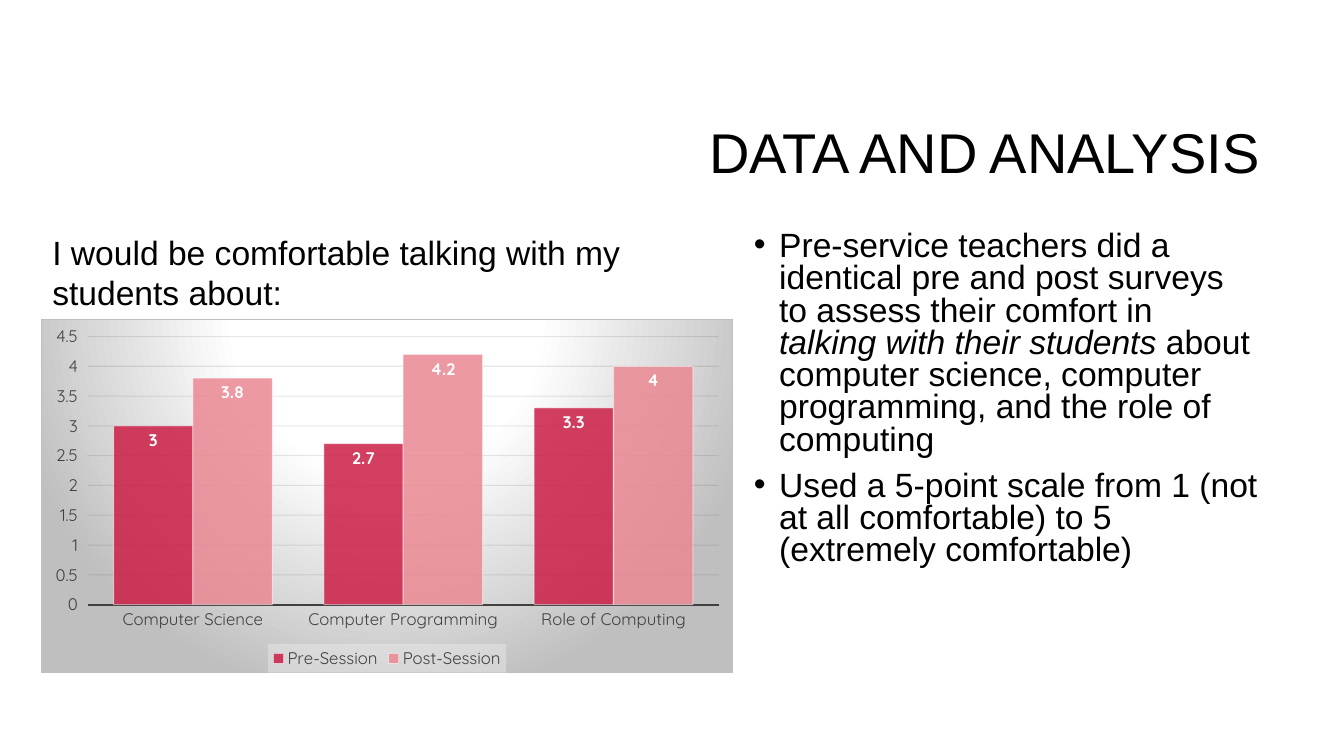
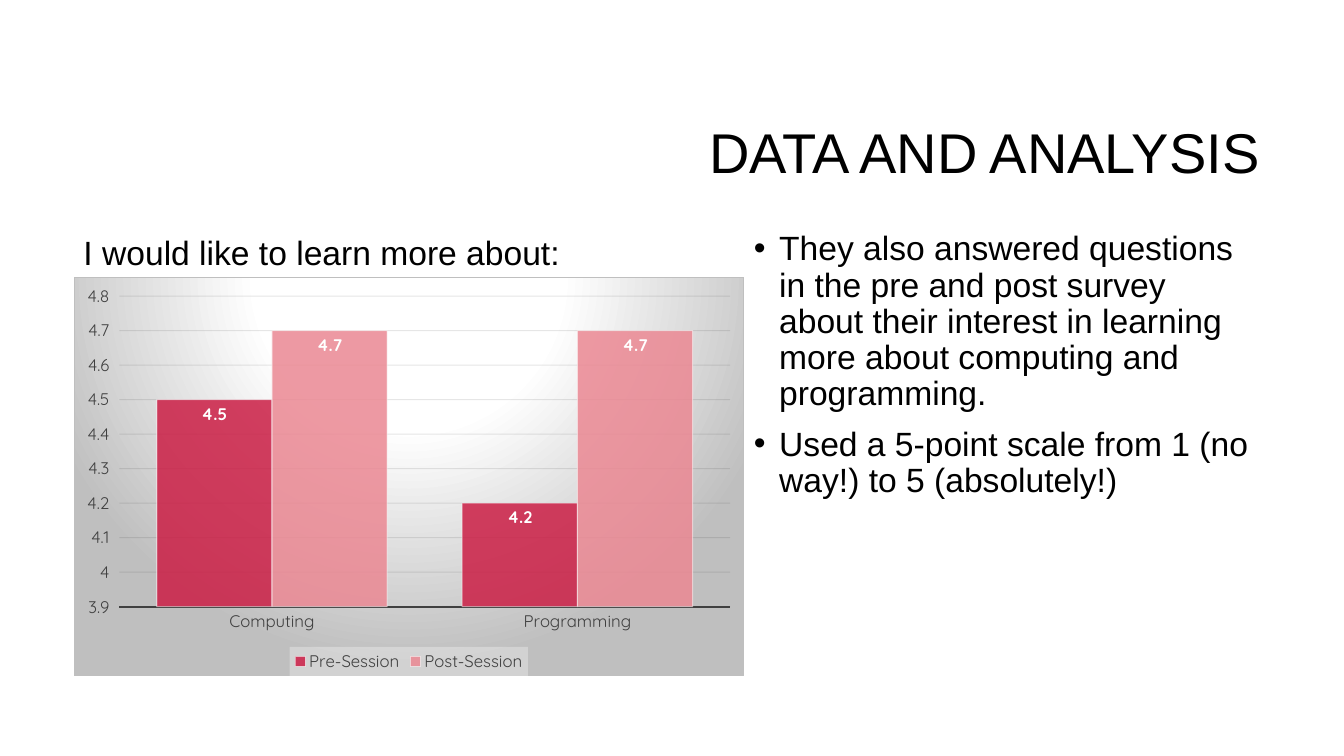
from pptx import Presentation
from pptx import util as u
from pptx.chart.data import CategoryChartData
from pptx.dml.color import RGBColor
from pptx.enum import chart as charts, text
from pptx.oxml import parse_xml
from pptx.oxml.ns import nsdecls, qn

PX = 9144  # 100 px to the inch
BODY_FONT, CHART_FONT = "Arial", "Quicksand"
BLACK, WHITE, GREY, SILVER = "000000", "FFFFFF", "404040", "BFBFBF"
SERIES_COLOURS = ["CB1E45", "EB8893"]
TITLE_BOX = (317, 83, 942, 142)
TITLE = "DATA AND ANALYSIS"
SERIES_NAMES = ["Pre-Session", "Post-Session"]

CHART_BACKGROUND = f"""<c:spPr {nsdecls("c", "a")}>
  <a:gradFill><a:gsLst>
    <a:gs pos="0"><a:srgbClr val="{WHITE}"/></a:gs>
    <a:gs pos="39000"><a:srgbClr val="{WHITE}"/></a:gs>
    <a:gs pos="100000"><a:srgbClr val="{SILVER}"/></a:gs>
  </a:gsLst><a:path path="circle">
    <a:fillToRect l="50000" t="-80000" r="50000" b="180000"/>
  </a:path></a:gradFill>
  <a:ln w="9525"><a:solidFill><a:srgbClr val="{SILVER}"/></a:solidFill></a:ln>
</c:spPr>"""
LEGEND_BACKGROUND = f"""<c:spPr {nsdecls("c", "a")}>
  <a:solidFill><a:srgbClr val="F2F2F2"><a:alpha val="39000"/></a:srgbClr></a:solidFill>
</c:spPr>"""

SLIDES = [
    dict(
        heading="I would be comfortable talking with my students about:",
        heading_box=(42, 225, 685, 91),
        chart_box=(41, 316, 686, 352),
        categories=["Computer Science", "Computer Programming", "Role of Computing"],
        values=[(3, 2.7, 3.3), (3.8, 4.2, 4)],
        scale=(0, 4.5, 0.5),
        body_box=(738, 225, 520, 367),
        spacing=0.8,
        bullets=[
            [("Pre-service teachers did a identical pre and post surveys to assess "
              "their comfort in ", False),
             ("talking with their students", True),
             (" about computer science, computer programming, and the role of "
              "computing", False)],
            [("Used a 5-point scale from 1 (not at all comfortable) to 5 "
              "(extremely comfortable)", False)],
        ],
    ),
    dict(
        heading="I would like to learn more about:",
        heading_box=(73, 225, 654, 50),
        chart_box=(73, 275, 665, 396),
        categories=["Computing", "Programming"],
        values=[(4.5, 4.2), (4.7, 4.7)],
        scale=(3.9, 4.8, 0.1),
        body_box=(738, 225, 520, 455),
        spacing=0.9,
        bullets=[
            [("They also answered questions in the pre and post survey about their "
              "interest in learning more about computing and programming.", False)],
            [("Used a 5-point scale from 1 (no way!) to 5 (absolutely!)", False)],
        ],
    ),
]


def emu(box):
    return [u.Emu(length * PX) for length in box]


def colour(value):
    return RGBColor.from_string(value)


def apply(target, **values):
    for name, value in values.items():
        setattr(target, name, value)


def set_font(font, size, tint, name=CHART_FONT, **extra):
    apply(font, size=u.Pt(size), name=name, **extra)
    font.color.rgb = colour(tint)


def set_line(line, tint, width):
    line.color.rgb = colour(tint)
    line.width = u.Pt(width)


def set_alpha(chart, query, percent):
    """Make every colour found by the query partly transparent."""
    for found in chart.element.xpath(query + "/a:solidFill/a:srgbClr"):
        alpha = found.makeelement(qn("a:alpha"), {"val": str(percent * 1000)})
        found.append(alpha)


def add_frame(page, box, **settings):
    frame = page.shapes.add_textbox(*emu(box)).text_frame
    apply(frame, word_wrap=True, **settings)
    return frame


def add_span(para, words, size, italic=None):
    span = para.add_run()
    span.text = words
    set_font(span.font, size, BLACK, BODY_FONT, italic=italic)


def add_title(page, box):
    para = add_frame(page, box, vertical_anchor=text.MSO_ANCHOR.MIDDLE).paragraphs[0]
    apply(para, alignment=text.PP_ALIGN.RIGHT, line_spacing=0.9)
    add_span(para, TITLE, 40)


def add_heading(page, box, words):
    frame = add_frame(page, box, auto_size=text.MSO_AUTO_SIZE.SHAPE_TO_FIT_TEXT)
    add_span(frame.paragraphs[0], words, 24)


def add_bullets(page, box, bullets, spacing):
    frame = add_frame(page, box)
    for index, spans in enumerate(bullets):
        para = frame.add_paragraph() if index else frame.paragraphs[0]
        properties = para._p.get_or_add_pPr()
        properties.set("marL", str(25 * PX))
        properties.set("indent", str(-25 * PX))
        for tag, key, value in [("a:buFont", "typeface", BODY_FONT),
                                ("a:buChar", "char", "•")]:
            properties.append(properties.makeelement(qn(tag), {key: value}))
        apply(para, line_spacing=spacing, space_before=u.Pt(10 if index else 0))
        for words, italic in spans:
            add_span(para, words, 24, italic)


def style_axes(chart, scale):
    low, high, step = scale
    names, numbers = chart.category_axis, chart.value_axis
    apply(names, major_tick_mark=charts.XL_TICK_MARK.NONE)
    set_line(names.format.line, GREY, 1.5)
    apply(numbers, minimum_scale=low, maximum_scale=high, major_unit=step,
          major_tick_mark=charts.XL_TICK_MARK.OUTSIDE, has_major_gridlines=True)
    numbers.format.line.fill.background()
    set_line(numbers.major_gridlines.format.line, "0D0D0D", 0.75)
    set_alpha(chart, ".//c:majorGridlines/c:spPr/a:ln", 10)
    for axis in (names, numbers):
        set_font(axis.tick_labels.font, 12, GREY)
        apply(axis.tick_labels, number_format="General", number_format_is_linked=False)


def style_series(chart):
    plot = chart.plots[0]
    apply(plot, gap_width=65, overlap=0, vary_by_categories=False)
    for series, tint in zip(plot.series, SERIES_COLOURS):
        series.format.fill.solid()
        series.format.fill.fore_color.rgb = colour(tint)
        set_line(series.format.line, WHITE, 0.75)
        labels = series.data_labels
        apply(labels, show_value=True, position=charts.XL_LABEL_POSITION.INSIDE_END)
        set_font(labels.font, 12, WHITE, bold=True)
    set_alpha(chart, ".//c:ser/c:spPr", 85)
    set_alpha(chart, ".//c:ser/c:spPr/a:ln", 50)


def style_legend(chart):
    chart.has_legend = True
    legend = chart.legend
    apply(legend, position=charts.XL_LEGEND_POSITION.BOTTOM, include_in_layout=False)
    set_font(legend.font, 12, GREY)
    legend_text = chart.element.xpath(".//c:legend/c:txPr")[0]
    legend_text.addprevious(parse_xml(LEGEND_BACKGROUND))


def add_survey_chart(page, box, categories, values, scale):
    data = CategoryChartData()
    data.categories = categories
    for name, scores in zip(SERIES_NAMES, values):
        data.add_series(name, scores)
    chart = page.shapes.add_chart(
        charts.XL_CHART_TYPE.COLUMN_CLUSTERED, *emu(box), data).chart
    chart.has_title = False
    set_font(chart.font, 10, BLACK)
    chart.element.xpath("./c:chart")[0].addnext(parse_xml(CHART_BACKGROUND))
    style_axes(chart, scale)
    style_series(chart)
    style_legend(chart)


def add_survey_slide(deck, content):
    page = deck.slides.add_slide(deck.slide_layouts[6])
    add_title(page, TITLE_BOX)
    add_survey_chart(page, content["chart_box"], content["categories"],
                     content["values"], content["scale"])
    add_bullets(page, content["body_box"], content["bullets"], content["spacing"])
    add_heading(page, content["heading_box"], content["heading"])


def main():
    deck = Presentation()
    deck.slide_width, deck.slide_height = emu((1333, 750))
    for content in SLIDES:
        add_survey_slide(deck, content)
    deck.save("out.pptx")


if __name__ == "__main__":
    main()
